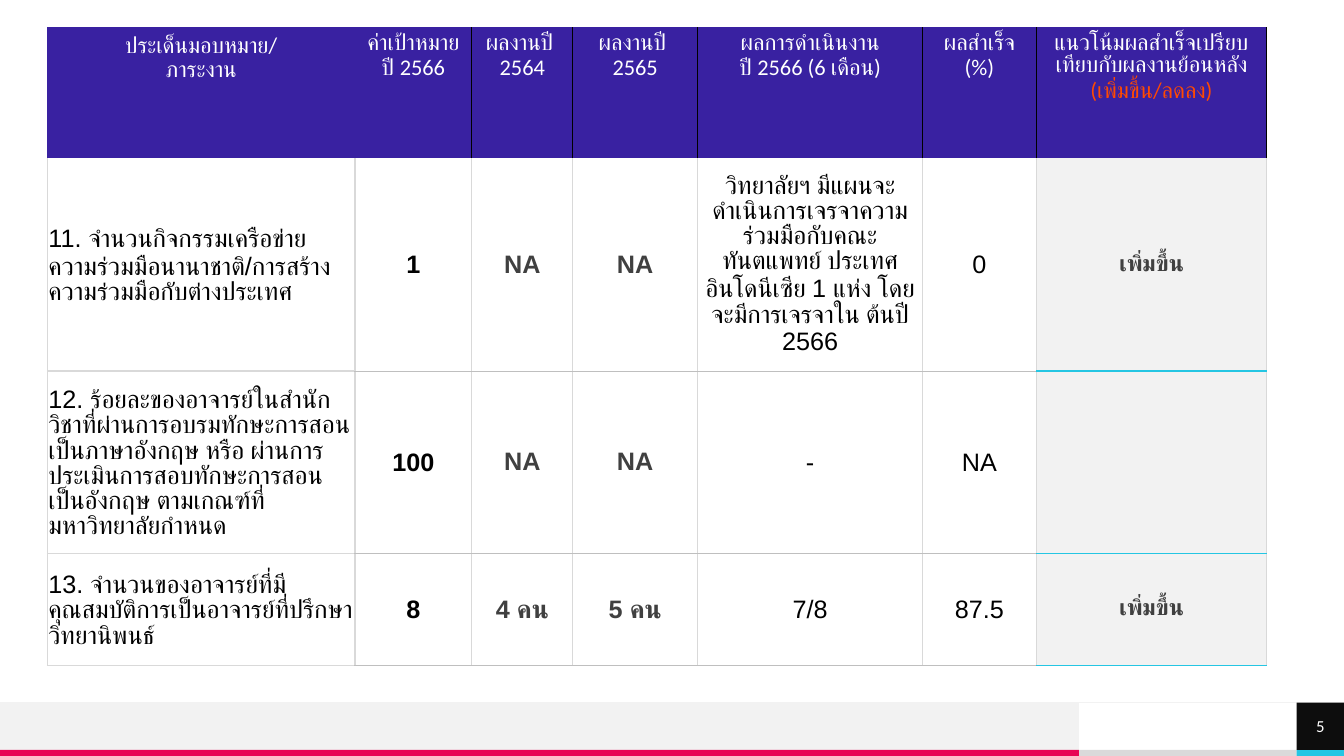
from dataclasses import dataclass

from lxml import etree
from pptx import Presentation
from pptx.dml.color import RGBColor
from pptx.enum import shapes, text
from pptx.oxml.ns import qn
from pptx.util import Inches, Pt


@dataclass(frozen=True)
class Theme:
    purple: str = "3921A1"
    cyan: str = "25C6E3"
    pink: str = "E80554"
    orange: str = "FF4A01"
    white: str = "FFFFFF"
    black: str = "000000"
    near_black: str = "0D0D0D"
    dark: str = "404040"
    rule: str = "BFBFBF"
    grid: str = "D9D9D9"
    strip: str = "DADADA"
    pale: str = "F2F2F2"
    head_font: str = "Calibri"
    body_font: str = "Arial"
    body: int = 18
    head: int = 16
    small: int = 12


T = Theme()

HEADERS = [
    ["ประเด็นมอบหมาย/", "ภาระงาน"],
    ["ค่าเป้าหมาย", "ปี 2566"],
    ["ผลงานปี ", "2564"],
    ["ผลงานปี ", "2565"],
    ["ผลการดำเนินงาน", "ปี 2566 (6 เดือน)"],
    ["ผลสำเร็จ (%)"],
    ["แนวโน้มผลสำเร็จเปรียบเทียบกับผลงานย้อนหลัง "],
]
TREND_CHOICES = "(เพิ่มขึ้น/ลดลง)"
ROWS = [
    ["11. จำนวนกิจกรรมเครือข่ายความร่วมมือนานาชาติ/การสร้างความร่วมมือกับต่างประเทศ",
     "1", "NA", "NA",
     "วิทยาลัยฯ มีแผนจะดำเนินการเจรจาความร่วมมือกับคณะทันตแพทย์ ประเทศอินโดนีเซีย 1 แห่ง "
     "โดยจะมีการเจรจาใน ต้นปี 2566",
     "0", "เพิ่มขึ้น"],
    ["12. ร้อยละของอาจารย์ในสำนักวิชาที่ผ่านการอบรมทักษะการสอนเป็นภาษาอังกฤษ หรือ "
     "ผ่านการประเมินการสอบทักษะการสอนเป็นอังกฤษ ตามเกณฑ์ที่มหาวิทยาลัยกำหนด",
     "100", "NA", "NA", "-", "NA", ""],
    ["13. จำนวนของอาจารย์ที่มีคุณสมบัติการเป็นอาจารย์ที่ปรึกษาวิทยานิพนธ์",
     "8", "4 คน", "5 คน", "7/8", "87.5", "เพิ่มขึ้น"],
]
COL_WIDTHS = [3.05, 1.16, 1, 1.24, 2.23, 1.13, 2.28]
ROW_HEIGHTS = [1.3, 2.11, 1.81, 1.11]
TREND = len(COL_WIDTHS) - 1
PAST_YEARS = (2, 3)
BOLD_COLUMNS = (1, *PAST_YEARS, TREND)

FOOTER_TOP, EDGE_TOP = 6.97, 7.44
BAR_END, PAGE_LEFT, SLIDE_W, SLIDE_H = 10.7, 12.86, 13.33, 7.5
FOOTER_RECTS = [  # left, top, right, bottom, colour
    (BAR_END, EDGE_TOP, PAGE_LEFT, SLIDE_H, T.strip),
    (0, FOOTER_TOP, BAR_END, EDGE_TOP, T.pale),
    (0, EDGE_TOP, BAR_END, SLIDE_H, T.pink),
    (PAGE_LEFT, EDGE_TOP, SLIDE_W, SLIDE_H, T.cyan),
]


def rgb(colour):
    return RGBColor.from_string(colour)


def style(font, name, size, colour, bold=False):
    font.name, font.size, font.bold = name, Pt(size), bold
    font.color.rgb = rgb(colour)


def set_margins(box, left, top, right, bottom):
    box.margin_left, box.margin_top = Inches(left), Inches(top)
    box.margin_right, box.margin_bottom = Inches(right), Inches(bottom)


def add_rect(s, left, top, right, bottom, colour):
    sp = s.shapes.add_shape(shapes.MSO_SHAPE.RECTANGLE, Inches(left), Inches(top),
                            Inches(right - left), Inches(bottom - top))
    sp.shadow.inherit = False
    sp.fill.solid()
    sp.fill.fore_color.rgb = rgb(colour)
    sp.line.fill.background()
    return sp


def set_borders(cell, **sides):
    """Draw each side L, R, T, B given as (colour, points); None hides it."""
    tc_pr = cell._tc.get_or_add_tcPr()
    for i, side in enumerate("LRTB"):
        ln = etree.Element(qn(f"a:ln{side}"))
        edge = sides.get(side)
        if edge:
            ln.set("w", str(int(Pt(edge[1]))))
            fill = etree.SubElement(ln, qn("a:solidFill"))
            etree.SubElement(fill, qn("a:srgbClr"), val=edge[0])
        else:
            etree.SubElement(ln, qn("a:noFill"))
        tc_pr.insert(i, ln)


def fill_cell(cell, colour):
    cell.fill.solid()
    cell.fill.fore_color.rgb = rgb(colour)


def format_header(cell, lines, col):
    fill_cell(cell, T.purple)
    tf = cell.text_frame
    tf.text = "\n".join(lines)
    for p in tf.paragraphs:
        p.alignment = text.PP_ALIGN.CENTER
        style(p.font, T.head_font, T.head, T.white)
    if col == TREND:
        r = tf.paragraphs[0].add_run()
        r.text = TREND_CHOICES
        r.font.color.rgb = rgb(T.orange)
    divider = (T.black, 1)
    set_borders(cell, L=divider if col > 1 else None, R=divider if col else None)


def row_edge(col):
    if col == 0:
        return T.grid, 1
    if col == TREND:
        return T.cyan, 1
    return T.rule, 0.25


def format_body(cell, value, row, col):
    fill_cell(cell, T.pale if col == TREND else T.white)
    cell.vertical_anchor = text.MSO_ANCHOR.MIDDLE
    muted = col in PAST_YEARS or col == TREND
    if not muted:
        set_margins(cell, 0.01, 0.01, 0.01, 0)
    p = cell.text_frame.paragraphs[0]
    p.text = value
    p.alignment = text.PP_ALIGN.CENTER if col else text.PP_ALIGN.LEFT
    name, size = (T.head_font, T.head) if col == TREND else (T.body_font, T.body)
    style(p.font, name, size, T.dark if muted else T.black, col in BOLD_COLUMNS)
    set_borders(cell, L=(T.grid, 1), R=(T.grid, 1), B=row_edge(col),
                T=row_edge(col) if row > 1 else None)


def add_results_table(s):
    frame = s.shapes.add_table(len(ROW_HEIGHTS), len(COL_WIDTHS), Inches(0.47), Inches(0.27),
                               Inches(sum(COL_WIDTHS)), Inches(sum(ROW_HEIGHTS)))
    table = frame.table
    table.horz_banding = False
    for column, width in zip(table.columns, COL_WIDTHS):
        column.width = Inches(width)
    for row, height in zip(table.rows, ROW_HEIGHTS):
        row.height = Inches(height)
    for col, lines in enumerate(HEADERS):
        format_header(table.cell(0, col), lines, col)
    for row, values in enumerate(ROWS, 1):
        for col, value in enumerate(values):
            format_body(table.cell(row, col), value, row, col)


def add_footer(s):
    for rect in FOOTER_RECTS:
        add_rect(s, *rect)
    line = s.shapes.add_connector(shapes.MSO_CONNECTOR.STRAIGHT, Inches(SLIDE_W),
                                  Inches(FOOTER_TOP), 0, Inches(FOOTER_TOP))
    line.line.color.rgb = rgb(T.pale)
    line.line.width = Pt(0.5)
    etree.SubElement(line._element.spPr, qn("a:effectLst"))

    tf = add_rect(s, PAGE_LEFT, FOOTER_TOP, SLIDE_W, EDGE_TOP, T.near_black).text_frame
    set_margins(tf, 0, 0, 0, 0)
    tf.vertical_anchor = text.MSO_ANCHOR.MIDDLE
    p = tf.paragraphs[0]
    p.text, p.alignment = "5", text.PP_ALIGN.CENTER
    style(p.font, T.head_font, T.small, T.white)


def main():
    prs = Presentation()
    prs.slide_width, prs.slide_height = Inches(SLIDE_W), Inches(SLIDE_H)
    s = prs.slides.add_slide(prs.slide_layouts[6])
    add_footer(s)
    add_results_table(s)
    prs.save("out.pptx")


if __name__ == "__main__":
    main()
